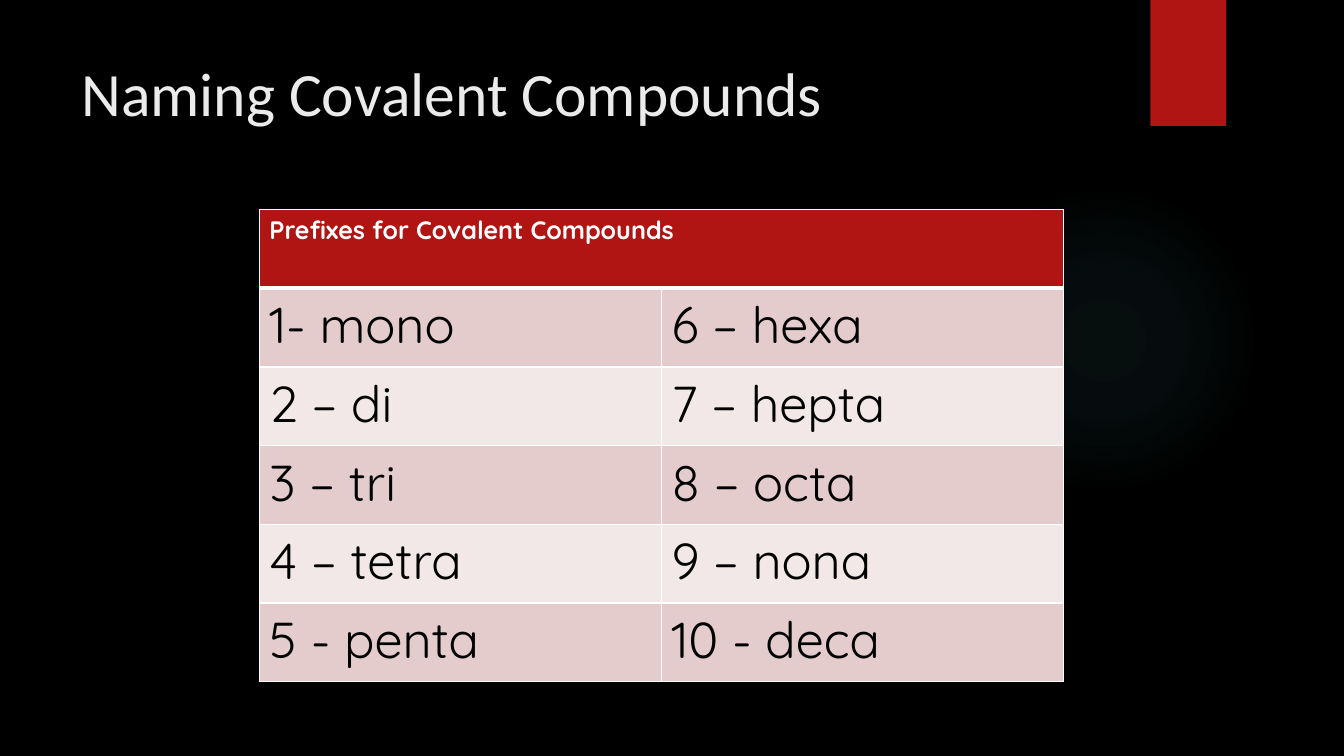
"""Build the slide listing the prefixes for covalent compounds."""
from dataclasses import dataclass

from pptx import Presentation
from pptx.dml.color import RGBColor
from pptx.enum.shapes import MSO_SHAPE
from pptx.oxml import parse_xml
from pptx.oxml.ns import nsdecls
from pptx.util import Pt


@dataclass(frozen=True)
class Theme:
    background: str = "000000"
    red: str = "B01513"
    glow: str = "50B9C1"
    title: str = "EBEBEB"
    white: str = "FFFFFF"
    black: str = "000000"
    bands: tuple = ("E4CCCC", "F2E8E7")
    title_font: str = "Calibri"
    table_font: str = "Quicksand"
    title_size: int = 44
    header_size: int = 18
    body_size: int = 36


theme = Theme()


def write_text(frame, text, font, size, color, bold=False):
    frame.word_wrap = True
    span = frame.paragraphs[0].add_run()
    span.text = text
    span.font.name = font
    span.font.size = Pt(size)
    span.font.bold = bold
    span.font.color.rgb = RGBColor.from_string(color)


def style_cell(cell, color, top, bottom):
    properties = cell._tc.get_or_add_tcPr()
    for side, width in (("L", 1), ("R", 1), ("T", top), ("B", bottom)):
        properties.append(parse_xml(
            f'<a:ln{side} {nsdecls("a")} w="{Pt(width)}"><a:solidFill>'
            f'<a:srgbClr val="{theme.white}"/></a:solidFill></a:ln{side}>'))
    cell.fill.solid()
    cell.fill.fore_color.rgb = RGBColor.from_string(color)


deck = Presentation()
deck.slide_width, deck.slide_height = Pt(960), Pt(540)
page = deck.slides.add_slide(deck.slide_layouts[6])
page.background.fill.solid()
page.background.fill.fore_color.rgb = RGBColor.from_string(theme.background)

glow = page.shapes.add_shape(MSO_SHAPE.OVAL, Pt(677.5), Pt(131.75), Pt(221.75), Pt(221.75))
glow.shadow.inherit = False
glow.line.fill.background()
stops = "".join(
    f'<a:gs pos="{position * 1000}"><a:srgbClr val="{theme.glow}">'
    f'<a:alpha val="{alpha * 1000}"/></a:srgbClr></a:gs>'
    for position, alpha in ((0, 7), (36, 6), (69, 0), (100, 0)))
glow._element.spPr.insert(2, parse_xml(
    f'<a:gradFill {nsdecls("a")}><a:gsLst>{stops}</a:gsLst><a:path path="circle">'
    '<a:fillToRect l="50000" t="50000" r="50000" b="50000"/></a:path></a:gradFill>'))

ribbon = page.shapes.add_shape(MSO_SHAPE.RECTANGLE, Pt(821.75), Pt(0), Pt(54), Pt(90))
ribbon.shadow.inherit = False
ribbon.fill.solid()
ribbon.fill.fore_color.rgb = RGBColor.from_string(theme.red)
ribbon.line.fill.background()

title_box = page.shapes.add_textbox(Pt(51), Pt(36), Pt(741), Pt(110))
write_text(title_box.text_frame, "Naming Covalent Compounds", font=theme.title_font,
           size=theme.title_size, color=theme.title)

prefixes = [
    ("1- mono", "6 – hexa"),
    ("2 – di", "7 – hepta"),
    ("3 – tri", "8 – octa"),
    ("4 – tetra", "9 – nona"),
    ("5 - penta", "10 - deca"),
]
table = page.shapes.add_table(len(prefixes) + 1, 2, Pt(185.25), Pt(149.75),
                              Pt(574.5), Pt(337.2)).table
for row in table.rows:
    row.height = Pt(56.2)

header = table.cell(0, 0)
header.merge(table.cell(0, 1))
write_text(header.text_frame, "Prefixes for Covalent Compounds", font=theme.table_font,
           size=theme.header_size, color=theme.white, bold=True)
for column in range(2):
    style_cell(table.cell(0, column), theme.red, top=1, bottom=3)

for number, pair in enumerate(prefixes, start=1):
    for column, prefix in enumerate(pair):
        cell = table.cell(number, column)
        write_text(cell.text_frame, prefix, font=theme.table_font,
                   size=theme.body_size, color=theme.black)
        style_cell(cell, theme.bands[(number - 1) % 2], top=3 if number == 1 else 1, bottom=1)

deck.save("out.pptx")
